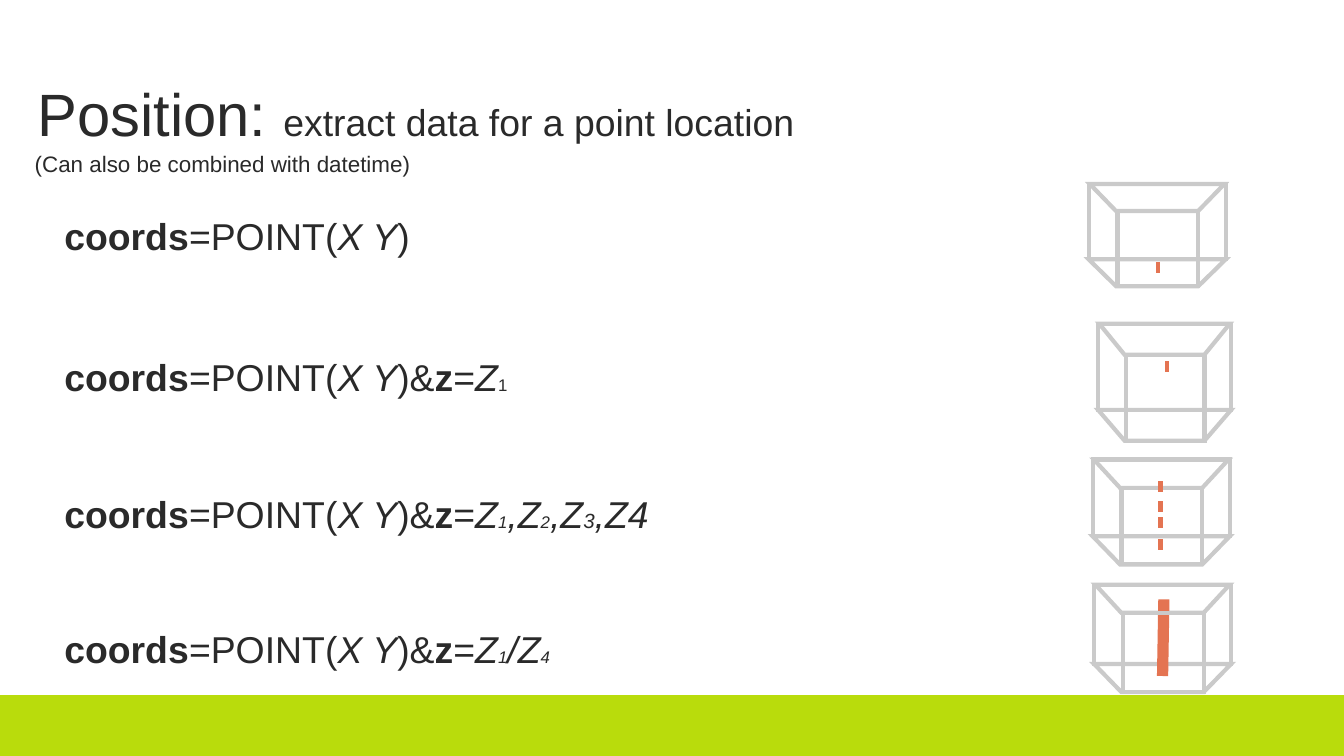
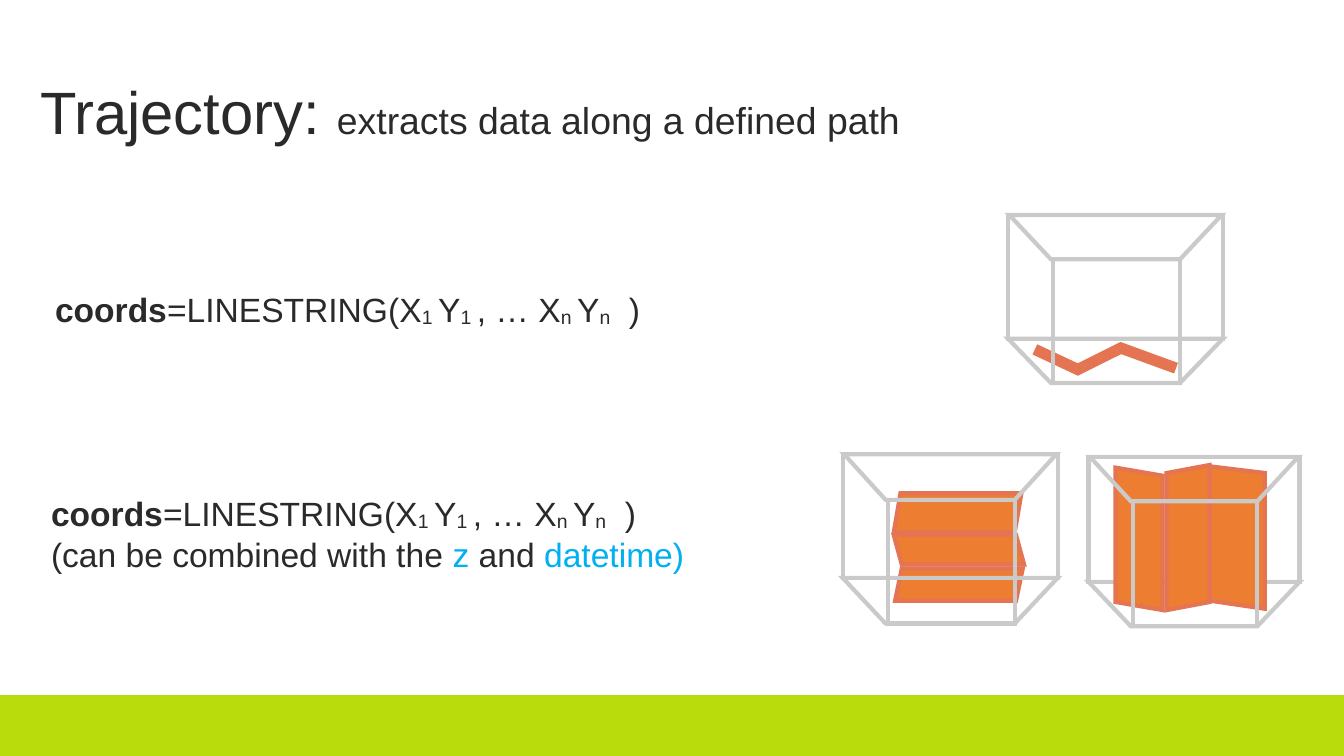
"""Builds two slides on position and trajectory data queries."""
import pptx
import pptx.dml.color
import pptx.enum.shapes
import pptx.enum.text
import pptx.oxml.ns
import pptx.util
from lxml import etree

Inches = pptx.util.Inches
RGBColor = pptx.dml.color.RGBColor
RECTANGLE = pptx.enum.shapes.MSO_SHAPE.RECTANGLE
STRAIGHT = pptx.enum.shapes.MSO_CONNECTOR.STRAIGHT
ANCHOR = pptx.enum.text.MSO_ANCHOR
qn = pptx.oxml.ns.qn

LIME = RGBColor(0xB9, 0xDC, 0x0C)
INK = RGBColor(0x2A, 0x2A, 0x2A)
SKY = RGBColor(0x00, 0xB0, 0xF0)
GREY = RGBColor(0xCA, 0xCA, 0xCA)
CORAL = RGBColor(0xE4, 0x74, 0x52)
ORANGE = RGBColor(0xED, 0x7D, 0x31)

BOLD = {"bold": True}
ITALIC = {"italic": True}
SUBTITLE = {"size": 20}
SMALL = {"size": 9}
SMALL_ITALIC = {"size": 9, "italic": True}
LOWERED = {"baseline": "-6000"}
LINKED = {"color": SKY}


def write_text(slide, box, paragraphs, size, inset=0.1, spacing=0.9, anchor=ANCHOR.BOTTOM):
    frame = slide.shapes.add_textbox(*map(Inches, box)).text_frame
    frame.word_wrap = True
    frame.vertical_anchor = anchor
    frame.margin_left = frame.margin_right = Inches(inset)
    for index, runs in enumerate(paragraphs):
        paragraph = frame.add_paragraph() if index else frame.paragraphs[0]
        paragraph.line_spacing = spacing
        for text, style in runs:
            run = paragraph.add_run()
            run.text = text
            run.font.name = "Arial"
            run.font.size = pptx.util.Pt(style.get("size", size))
            run.font.bold = style.get("bold", False)
            run.font.italic = style.get("italic", False)
            run.font.color.rgb = style.get("color", INK)
            for attribute in ("baseline", "spc"):
                if attribute in style:
                    run._r.get_or_add_rPr().set(attribute, style[attribute])


def draw_outline(slide, points, color=GREY, width=2.25, fill=None, closed=True):
    corners = [(Inches(x), Inches(y)) for x, y in points]
    builder = slide.shapes.build_freeform(*corners[0])
    builder.add_line_segments(corners[1:], close=closed)
    outline = builder.convert_to_shape()
    outline.shadow.inherit = False
    if fill is None:
        outline.fill.background()
    else:
        outline.fill.solid()
        outline.fill.fore_color.rgb = fill
    outline.line.color.rgb = color
    outline.line.width = pptx.util.Pt(width)
    etree.SubElement(outline._element.spPr.find(qn("a:ln")), qn("a:miter")).set("lim", "800000")


deck = pptx.Presentation()
deck.slide_width = Inches(10)
deck.slide_height = Inches(5.625)
position, trajectory = [deck.slides.add_slide(deck.slide_layouts[6]) for _ in range(2)]

headings = [
    (position, (0.18, 0.57, 8.52, 0.59), "Position: ", "extract data for a point location"),
    (trajectory, (0.2, 0.52, 8.54, 0.63), "Trajectory: ", "extracts data along a defined path"),
]
for slide, box, topic, explanation in headings:
    band = slide.shapes.add_shape(RECTANGLE, 0, Inches(5.18), Inches(10), Inches(0.45))
    band.shadow.inherit = False
    band.fill.solid()
    band.fill.fore_color.rgb = LIME
    band.line.color.rgb = LIME
    band.line.width = pptx.util.Pt(1)
    write_text(slide, box, [[(topic, {}), (explanation, SUBTITLE)]], 32)

write_text(position, (0.16, 1.07, 5.01, 0.3), [[("(Can also be combined with datetime)", {})]],
           12, spacing=1, anchor=ANCHOR.TOP)

point = [("coords", BOLD), ("=POINT(", {}), ("X Y", ITALIC)]
depth = point + [(")&", {}), ("z", BOLD), ("=", {}), ("Z", ITALIC)]
queries = [
    (1.53, 0.44, point + [(")", {})]),
    (2.39, 0.63, depth + [("1", SMALL)]),
    (3.41, 0.63, depth + [("1", SMALL_ITALIC), (",Z", ITALIC), ("2", SMALL_ITALIC), (",Z", ITALIC),
                          ("3", {"size": 11, "italic": True}), (",Z4", ITALIC)]),
    (4.42, 0.63, depth + [("1", SMALL_ITALIC), ("/Z", ITALIC), ("4", SMALL_ITALIC)]),
]
for top, height, runs in queries:
    write_text(position, (0.38, top, 9.45, height), [runs], 20)

linestring = [("coords", BOLD), ("=LINESTRING(X", {}), ("1 ", LOWERED), ("Y", {}), ("1 ", LOWERED),
              (", … X", {}), ("n ", LOWERED), ("Y", {}), ("n", LOWERED), (" ", {"spc": "500"}), (")", {})]
combination = [("(can be combined with the ", {}), ("z", LINKED), (" and ", {}), ("datetime)", LINKED)]
write_text(trajectory, (0.36, 2.1, 5.27, 0.4), [linestring], 18, 0.05, 1, ANCHOR.TOP)
write_text(trajectory, (0.33, 3.62, 5.27, 0.71), [linestring, combination], 18, 0.05, 1, ANCHOR.TOP)

route = [(7.7, 2.6), (8.02, 2.75), (8.34, 2.59), (8.75, 2.74)]
upright_panels = [
    [(8.65, 4.54), (8.3, 4.48), (8.3, 3.48), (8.65, 3.54)],
    [(9.41, 4.53), (9, 4.47), (9, 3.47), (9.41, 3.52)],
    [(9, 3.46), (8.68, 3.52), (8.68, 4.54), (9, 4.48)],
]
level_panels = [
    [(7.61, 4.23), (7.56, 4.47), (6.66, 4.47), (6.71, 4.23)],
    [(6.65, 3.98), (6.71, 4.2), (7.62, 4.2), (7.56, 3.98)],
    [(7.6, 3.67), (7.55, 3.96), (6.65, 3.96), (6.7, 3.67)],
]
marked_last = "back floor ceiling front data"
cubes = [
    (position, (8.14, 4.35, 1.02, 0.59, 0.21), "back floor ceiling data front",
     {"ticks": [(8.65, 5.03, 8.66, 4.46)]}),
    (position, (8.1, 1.37, 1.02, 0.56, 0.2), marked_last, {"ticks": [(8.6, 1.99, 8.63, 1.99)]}),
    (position, (8.17, 2.41, 0.99, 0.64, 0.23), marked_last, {"ticks": [(8.67, 2.73, 8.7, 2.73)]}),
    (position, (8.13, 3.42, 1.02, 0.57, 0.21), marked_last,
     {"ticks": [(8.62, y, 8.65, y) for y in (3.62, 3.77, 3.89, 4.05)]}),
    (trajectory, (7.5, 1.6, 1.6, 0.92, 0.33), "back floor data front ceiling", {"route": route}),
    (trajectory, (8.1, 3.4, 1.57, 0.93, 0.33), "floor back data ceiling front",
     {"panels": upright_panels}),
    (trajectory, (6.27, 3.38, 1.6, 0.92, 0.34), "back data floor front ceiling",
     {"panels": level_panels}),
]
for slide, (left, top, width, height, drop), layers, data in cubes:
    right = left + width
    faces = {"back": (left, top, width, height),
             "front": (left + 0.21 * width, top + drop, 0.59 * width, height)}
    slopes = {"floor": (top + height, 0), "ceiling": (top, 0.01)}
    for layer in layers.split():
        if layer in faces:
            face = slide.shapes.add_shape(RECTANGLE, *map(Inches, faces[layer]))
            face.shadow.inherit = False
            face.fill.background()
            face.line.color.rgb = GREY
            face.line.width = pptx.util.Pt(2.25)
            etree.SubElement(face._element.spPr.find(qn("a:ln")), qn("a:miter")).set("lim", "800000")
        elif layer in slopes:
            y, trim = slopes[layer]
            draw_outline(slide, [(left + trim, y), (right - trim, y),
                                 (right - 0.2 * width, y + drop), (left + 0.2 * width, y + drop)])
        else:
            for x1, y1, x2, y2 in data.get("ticks", []):
                tick = slide.shapes.add_connector(STRAIGHT, *map(Inches, (x1, y1, x2, y2)))
                tick.line.color.rgb = CORAL
                tick.line.width = pptx.util.Pt(6)
                etree.SubElement(tick._element.spPr, qn("a:effectLst"))
            for panel in data.get("panels", []):
                draw_outline(slide, panel, CORAL, fill=ORANGE)
            if "route" in data:
                draw_outline(slide, data["route"], CORAL, 6, closed=False)

deck.save("out.pptx")
